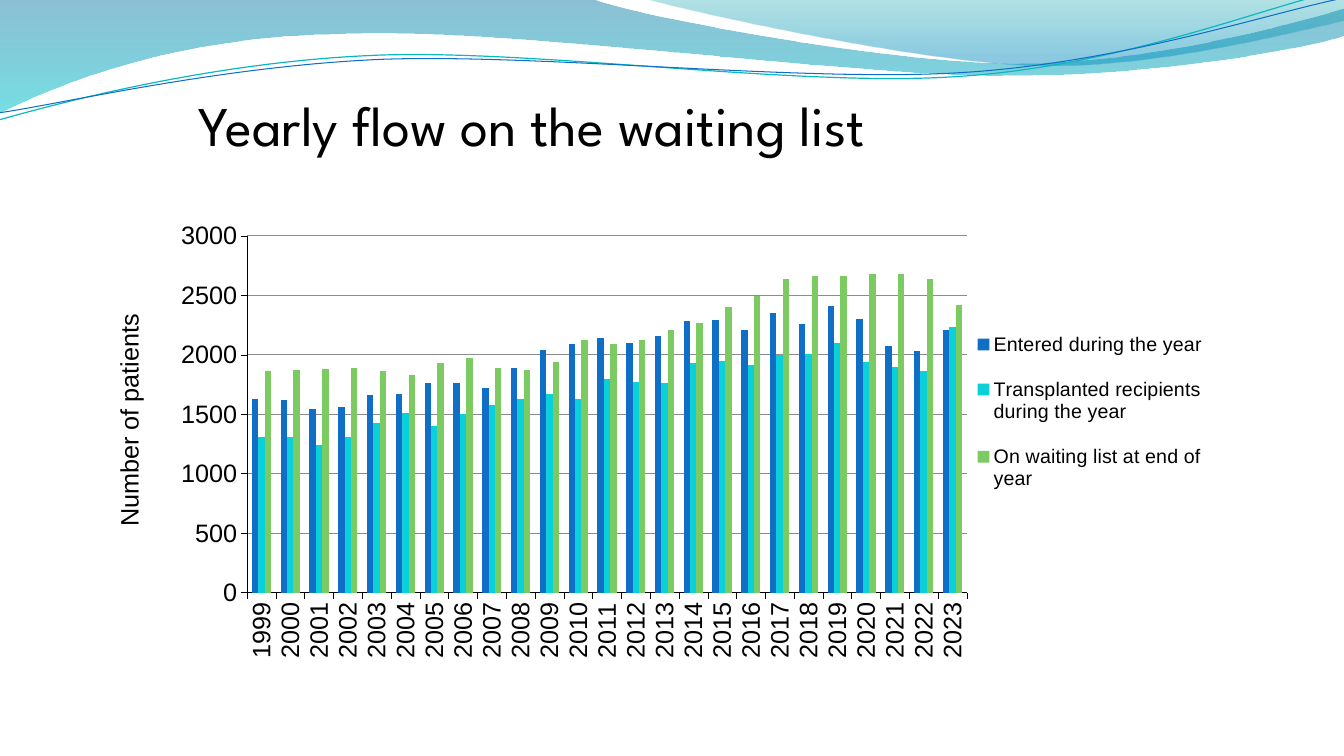
from math import cos, radians, sin

from lxml import etree
from pptx import Presentation
from pptx.chart.data import CategoryChartData
from pptx.dml.color import RGBColor
from pptx.enum.chart import XL_CHART_TYPE, XL_LEGEND_POSITION, XL_TICK_MARK
from pptx.oxml.ns import qn
from pptx.util import Inches, Pt

COLORS = {
    "black": "000000", "grid": "8C8C8C",
    "blue": "0F6FC6", "cyan": "0BD0D9", "green": "7CCA62", "teal": "0AB8BF",
    "deep_blue": "0074A1", "aqua": "00C6CF", "sea": "00A1A9", "sky": "008BBF",
}
CHART_WIDTH, CHART_HEIGHT = 11.18, 5.03
TILT = 2.7  # degrees by which the thin curves turn counter-clockwise

# Outlines in inches: a start point, then (x, y) lines or six-number curves.
BROAD_WAVE = [(0, 0), (5.87, -0.01),
              (6.34, 0.17, 8.84, 0.63, 10.11, 0.63), (11.37, 0.63, 12.77, 0.26, 13.33, 0.09),
              (13.34, 0.36),
              (13.11, 0.44, 11.59, 0.76, 9.94, 0.75), (8.29, 0.75, 5.09, 0.28, 3.43, 0.34),
              (1.72, 0.36, 0.61, 0.83, -0.02, 1.13), (0, 0)]
RIGHT_WAVE = [(6.38, -0.01), (6.79, 0.11, 9.09, 0.62, 10.25, 0.65),
              (11.4, 0.69, 12.82, 0.32, 13.33, 0.21), (13.33, 0), (6.38, -0.01)]
TEAL_LINE = [(-0.01, 1.19), (0.63, 1.01, 2.1, 0.62, 3.69, 0.55),
             (5.27, 0.48, 7.89, 0.87, 9.49, 0.76), (11.1, 0.66, 12.51, 0.08, 13.3, -0.1)]
BLUE_LINE = [(-0.01, 1.12), (0.62, 1.03, 2.18, 0.66, 3.77, 0.59),
             (5.37, 0.53, 7.96, 0.82, 9.55, 0.72), (11.14, 0.62, 12.55, 0.14, 13.33, -0.02)]

YEARS = [str(year) for year in range(1999, 2024)]
SERIES = [
    ("Entered during the year", "blue",
     [1630, 1620, 1540, 1560, 1660, 1670, 1760, 1760, 1720, 1890, 2040, 2090, 2140,
      2100, 2160, 2280, 2290, 2210, 2350, 2260, 2410, 2300, 2070, 2030, 2210]),
    ("Transplanted recipients during the year", "cyan",
     [1310, 1310, 1240, 1310, 1430, 1510, 1400, 1500, 1580, 1630, 1670, 1630, 1800,
      1770, 1760, 1930, 1950, 1910, 2000, 2010, 2100, 1940, 1900, 1860, 2230]),
    ("On waiting list at end of year", "green",
     [1860, 1870, 1880, 1890, 1860, 1830, 1930, 1970, 1890, 1870, 1940, 2120, 2090,
      2120, 2210, 2270, 2400, 2490, 2640, 2660, 2660, 2680, 2680, 2640, 2420]),
]


def rgb(name):
    return RGBColor.from_string(COLORS[name])


def set_font(font, size, face="Arial"):
    font.name, font.size, font.bold = face, Pt(size), False
    font.color.rgb = rgb("black")


def set_line(line, color, width):
    line.color.rgb = rgb(color)
    line.width = Pt(width)


def turn(part, center, degrees):
    """Turn every x, y pair of an outline part clockwise about the centre."""
    c, d = cos(radians(degrees)), sin(radians(degrees))
    turned = []
    for x, y in zip(part[::2], part[1::2]):
        dx, dy = x - center[0], y - center[1]
        turned += [center[0] + dx * c - dy * d, center[1] + dx * d + dy * c]
    return tuple(turned)


def add_outline(s, outline, close):
    """Draw the points as segments, then join each group of three into a curve."""
    points = [(Inches(x), Inches(y)) for part in outline for x, y in zip(part[::2], part[1::2])]
    builder = s.shapes.build_freeform(*points[0])
    builder.add_line_segments(points[1:], close=close)
    sp = builder.convert_to_shape()
    sp.shadow.inherit = False
    segments = iter(list(sp._element.iter(qn("a:lnTo"))))
    for part in outline[1:]:
        first = next(segments)
        if len(part) == 6:
            first.tag = qn("a:cubicBezTo")
            for _ in range(2):
                extra = next(segments)
                first.append(extra[0])
                extra.getparent().remove(extra)
    return sp


def add_wave(s, outline, stops):
    """Add a see-through gradient shape; stops are (position, colour, opacity %)."""
    sp = add_outline(s, outline, True)
    sp.line.fill.background()
    sp.fill.gradient()
    sp.fill.gradient_angle = 270
    for stop, (position, color, _) in zip(sp.fill.gradient_stops, stops):
        stop.position = position
        stop.color.rgb = rgb(color)
    for clr, (_, _, opacity) in zip(sp._element.spPr.iter(qn("a:srgbClr")), stops):
        etree.SubElement(clr, qn("a:alpha")).set("val", str(opacity * 1000))


def add_curve(s, outline, center, color, width):
    sp = add_outline(s, [turn(part, center, TILT) for part in outline], False)
    sp.rotation = 360 - TILT
    sp.fill.background()
    set_line(sp.line, color, width)


def add_title(s, text):
    tf = s.shapes.add_textbox(Inches(1.87), Inches(0.98), Inches(8.42), Inches(0.88)).text_frame
    tf.word_wrap = True
    tf.text = text
    p = tf.paragraphs[0]
    p.line_spacing = 0.8
    set_font(p.runs[0].font, 40, "League Spartan")


def place(element, inner=False, **inches):
    """Give a chart part a manual layout, in inches from the chart's corner."""
    for old in element.findall(qn("c:layout")):
        element.remove(old)
    layout = etree.Element(qn("c:layout"))
    manual = etree.SubElement(layout, qn("c:manualLayout"))
    settings = [("layoutTarget", "inner")] if inner else []
    settings += [("xMode", "edge"), ("yMode", "edge")]
    settings += [(tag, value / (CHART_WIDTH if tag in "xw" else CHART_HEIGHT))
                 for tag, value in inches.items()]
    for tag, value in settings:
        etree.SubElement(manual, qn(f"c:{tag}")).set("val", str(value))
    overlay = element.find(qn("c:overlay"))
    if overlay is None:
        element.insert(0, layout)
    else:
        overlay.addprevious(layout)


def style_axis(axis):
    set_font(axis.tick_labels.font, 18)
    set_line(axis.format.line, "black", 0.25)
    axis.major_tick_mark = XL_TICK_MARK.OUTSIDE
    axis.minor_tick_mark = XL_TICK_MARK.NONE


def style_value_axis(axis):
    style_axis(axis)
    axis.minimum_scale, axis.maximum_scale, axis.major_unit = 0, 3000, 500
    axis.has_major_gridlines = True
    set_line(axis.major_gridlines.format.line, "grid", 0.5)
    tf = axis.axis_title.text_frame
    tf.text = "Number of patients"
    set_font(tf.paragraphs[0].runs[0].font, 18)
    body = tf._txBody.find(qn("a:bodyPr"))
    body.set("rot", "-5400000")
    body.set("vert", "horz")
    place(axis.axis_title._element, x=0.03, y=1.11)


def add_flow_chart(s):
    data = CategoryChartData()
    data.categories = YEARS
    for name, _, values in SERIES:
        data.add_series(name, values)
    chart = s.shapes.add_chart(XL_CHART_TYPE.COLUMN_CLUSTERED, Inches(1.04), Inches(1.96),
                               Inches(CHART_WIDTH), Inches(CHART_HEIGHT), data).chart
    set_font(chart.font, 18)
    chart.has_title = False
    plot = chart.plots[0]
    plot.gap_width, plot.overlap, plot.vary_by_categories = 150, 0, False
    for series, (_, color, _) in zip(plot.series, SERIES):
        series.format.fill.solid()
        series.format.fill.fore_color.rgb = rgb(color)
    style_axis(chart.category_axis)
    labels = chart.category_axis._element.find(qn("c:txPr"))
    labels.find(qn("a:bodyPr")).set("rot", "-5400000")
    style_value_axis(chart.value_axis)
    chart.has_legend = True
    chart.legend.position = XL_LEGEND_POSITION.RIGHT
    chart.legend.include_in_layout = False
    set_font(chart.legend.font, 14)
    place(chart.legend._element, x=8.54, y=1.12, w=2.46, h=2.01)
    place(chart._chartSpace.chart.plotArea, inner=True, x=1.41, y=0.38, w=7.14, h=3.54)


def main():
    prs = Presentation()
    prs.slide_width, prs.slide_height = Inches(13.33), Inches(7.5)
    s = prs.slides.add_slide(prs.slide_layouts[6])
    add_wave(s, BROAD_WAVE, [(0, "deep_blue", 45), (1, "aqua", 55)])
    add_wave(s, RIGHT_WAVE, [(0, "sea", 30), (0.8, "sky", 45)])
    add_curve(s, TEAL_LINE, (6.65, 0.58), "teal", 0.85)
    add_curve(s, BLUE_LINE, (6.67, 0.59), "blue", 0.75)
    add_title(s, "Yearly flow on the waiting list")
    add_flow_chart(s)
    prs.save("out.pptx")


if __name__ == "__main__":
    main()
